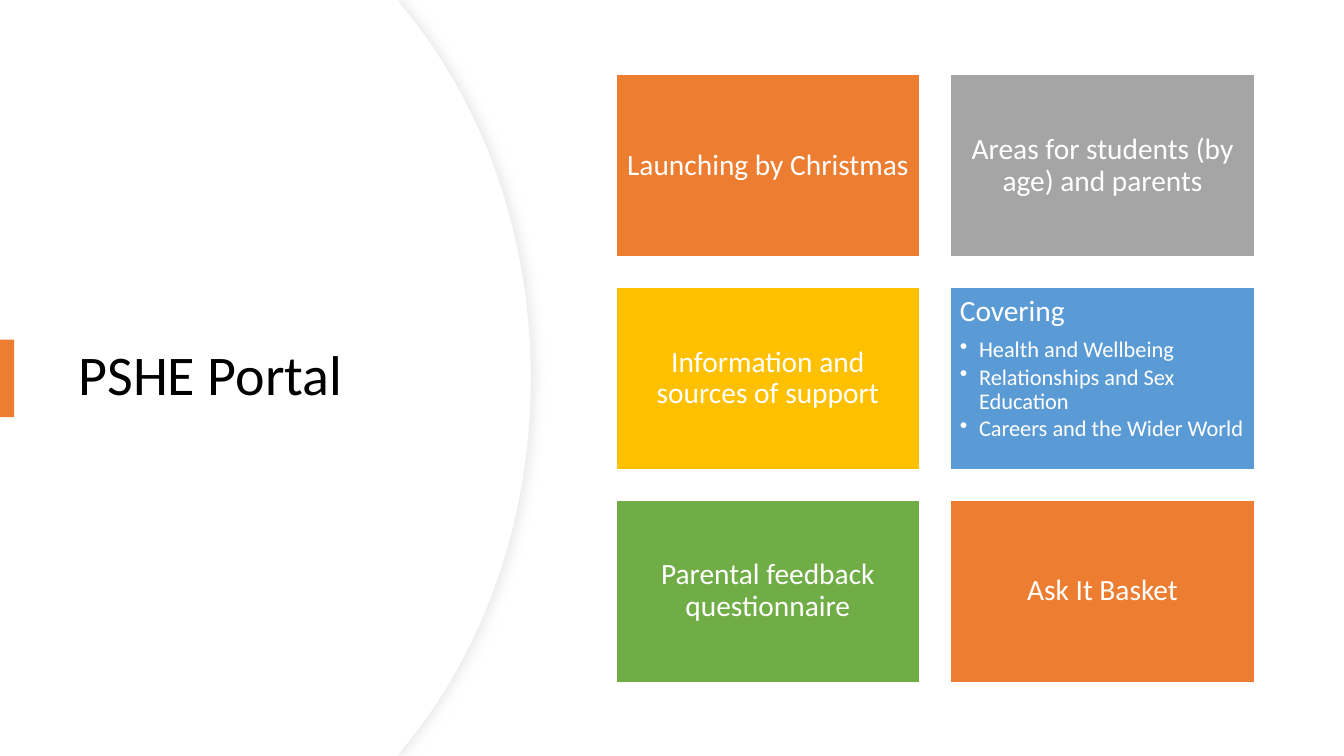
"""Build the PSHE Portal slide: a curved title panel beside a grid of six tiles."""
from dataclasses import dataclass

from lxml import etree
from pptx import Presentation
from pptx.dml.color import RGBColor
from pptx.enum.shapes import MSO_SHAPE
from pptx.enum.text import MSO_ANCHOR, PP_ALIGN
from pptx.oxml.ns import qn
from pptx.util import Inches, Pt

RECTANGLE = MSO_SHAPE.RECTANGLE
TOP, MIDDLE = MSO_ANCHOR.TOP, MSO_ANCHOR.MIDDLE
LEFT, CENTER = PP_ALIGN.LEFT, PP_ALIGN.CENTER


@dataclass(frozen=True)
class Theme:
    font: str = "Calibri"
    title_size: float = 40
    tile_size: float = 21
    bullet_size: float = 16
    black: str = "000000"
    white: str = "FFFFFF"
    panel_line: str = "EFEFEF"
    shadow: str = "D9D9D9"
    orange: str = "ED7D31"
    gray: str = "A5A5A5"
    gold: str = "FFC000"
    blue: str = "5B9BD5"
    green: str = "70AD47"


THEME = Theme()
TITLE = "PSHE Portal"
TILES = [
    ("Launching by Christmas", THEME.orange, []),
    ("Areas for students (by age) and parents", THEME.gray, []),
    ("Information and sources of support", THEME.gold, []),
    ("Covering", THEME.blue, [
        "Health and Wellbeing",
        "Relationships and Sex Education",
        "Careers and the Wider World",
    ]),
    ("Parental feedback questionnaire", THEME.green, []),
    ("Ask It Basket", THEME.orange, []),
]

PAGE_WIDTH, PAGE_HEIGHT = 13.33, 7.5
PANEL_CORNER = 3.94
PANEL_EDGES = 5.27, 5.26
CURVE = [(-1.26, 0.08), (-0.48, 1.02), (0, 2.32), (0, 3.75)]
CURVE_STEPS = 24
COLUMNS = 2
GRID_LEFT, GRID_TOP = 6.11, 0.74
TILE_WIDTH, TILE_HEIGHT = 3.01, 1.81
COLUMN_STEP, ROW_STEP = 3.32, 2.11
TILE_INSET = 0.09
BULLET_INDENT = 0.19


def paint(shape, fill, line=None, width=1):
    shape.shadow.inherit = False
    shape.fill.solid()
    shape.fill.fore_color.rgb = RGBColor.from_string(fill)
    if line:
        shape.line.color.rgb = RGBColor.from_string(line)
        shape.line.width = Pt(width)
    else:
        shape.line.fill.background()


def add_block(page, left, top, width, height, fill, line=None):
    block = page.shapes.add_shape(
        RECTANGLE, Inches(left), Inches(top), Inches(width), Inches(height))
    paint(block, fill, line)
    return block


def set_frame(box, anchor, inset):
    frame = box.text_frame
    frame.word_wrap = True
    frame.vertical_anchor = anchor
    frame.margin_left = frame.margin_right = Inches(inset)
    frame.margin_top = frame.margin_bottom = Inches(inset)
    return frame


def write(para, text, size, color, align=LEFT, after=0, bullet=False):
    para.alignment = align
    para.line_spacing = 0.9
    para.space_after = Pt(after)
    if bullet:
        para.level = 1
        properties = para._p.get_or_add_pPr()
        properties.set("marL", str(Inches(BULLET_INDENT)))
        properties.set("indent", str(-Inches(BULLET_INDENT)))
        etree.SubElement(properties, qn("a:buChar"), char="•")
    span = para.add_run()
    span.text = text
    span.font.name = THEME.font
    span.font.size = Pt(size)
    span.font.color.rgb = RGBColor.from_string(color)


def curve_point(t):
    weights = (1 - t) ** 3, 3 * t * (1 - t) ** 2, 3 * t ** 2 * (1 - t), t ** 3
    return tuple(sum(weight * point[axis] for weight, point in zip(weights, CURVE))
                 for axis in (0, 1))


def add_panel(page, edge):
    points = [curve_point(step / CURVE_STEPS) for step in range(CURVE_STEPS + 1)]
    upper = [(PANEL_CORNER, 0)] + [(edge + x, y) for x, y in points]
    lower = [(x, PAGE_HEIGHT - y) for x, y in reversed(upper[:-1])]
    outline = upper + lower + [(0, PAGE_HEIGHT)]
    builder = page.shapes.build_freeform(0, 0)
    builder.add_line_segments([(Inches(x), Inches(y)) for x, y in outline], close=True)
    return builder.convert_to_shape()


def add_shadow(shape):
    effects = shape._element.spPr.find(qn("a:effectLst"))
    shadow = etree.SubElement(
        effects, qn("a:outerShdw"), blurRad=str(Pt(7)), dist=str(Pt(3)),
        dir="0", algn="l", rotWithShape="0")
    color = etree.SubElement(shadow, qn("a:srgbClr"), val=THEME.shadow)
    etree.SubElement(color, qn("a:alpha"), val="50000")


def add_tile(page, index, heading, fill, bullets):
    row, column = divmod(index, COLUMNS)
    tile = add_block(page, GRID_LEFT + column * COLUMN_STEP, GRID_TOP + row * ROW_STEP,
                     TILE_WIDTH, TILE_HEIGHT, fill, THEME.white)
    frame = set_frame(tile, TOP if bullets else MIDDLE, TILE_INSET)
    write(frame.paragraphs[0], heading, THEME.tile_size, THEME.white,
          align=LEFT if bullets else CENTER, after=7.35)
    for text in bullets:
        write(frame.add_paragraph(), text, THEME.bullet_size, THEME.white,
              after=2.4, bullet=True)


def main():
    deck = Presentation()
    deck.slide_width, deck.slide_height = Inches(PAGE_WIDTH), Inches(PAGE_HEIGHT)
    page = deck.slides.add_slide(deck.slide_layouts[6])

    outer, inner = [add_panel(page, edge) for edge in PANEL_EDGES]
    paint(outer, THEME.white, THEME.panel_line, 0.75)
    add_shadow(outer)
    paint(inner, THEME.white)

    title = page.shapes.add_textbox(Inches(0.68), Inches(1.27), Inches(3.94), Inches(4.95))
    frame = set_frame(title, MIDDLE, 0.1)
    write(frame.paragraphs[0], TITLE, THEME.title_size, THEME.black)
    add_block(page, 0, 3.37, 0.14, 0.77, THEME.orange)

    for index, tile in enumerate(TILES):
        add_tile(page, index, *tile)
    deck.save("out.pptx")


if __name__ == "__main__":
    main()
